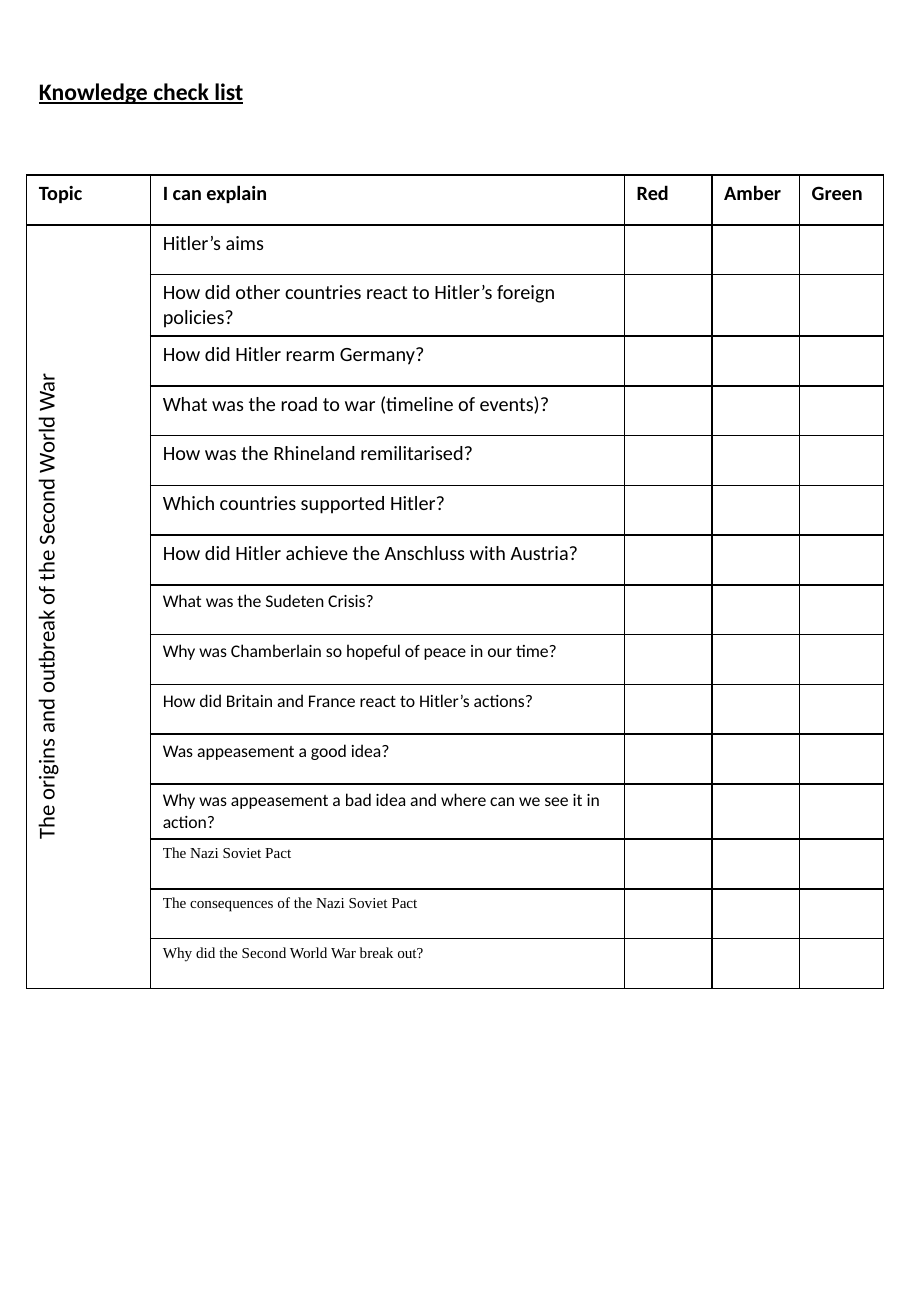
from dataclasses import dataclass

from lxml.etree import SubElement
from pptx import Presentation
from pptx.dml.color import RGBColor
from pptx.enum.text import MSO_ANCHOR, PP_ALIGN
from pptx.oxml.ns import qn
from pptx.slide import Slide
from pptx.table import Table, _Cell as Cell
from pptx.text.text import TextFrame
from pptx.util import Cm, Pt

BLACK = RGBColor(0x00, 0x00, 0x00)
WHITE = RGBColor(0xFF, 0xFF, 0xFF)

LEFT = Cm(0.56)
COLUMN_WIDTHS = [Cm(2.59), Cm(9.91), Cm(1.83), Cm(1.83), Cm(1.75)]
ROW_HEIGHT = Cm(1.04)
HEADERS = ["Topic", "I can explain", "Red", "Amber", "Green"]
TOPIC = "The origins and outbreak of the Second World War"


@dataclass(frozen=True)
class TextStyle:
    size: float
    font: str = "Calibri"
    bold: bool = False
    underline: bool = False


@dataclass(frozen=True)
class QuestionGroup:
    style: TextStyle
    questions: list[str]


TITLE_STYLE = TextStyle(14, bold=True, underline=True)
HEADER_STYLE = TextStyle(12, bold=True)
TOPIC_STYLE = TextStyle(13.5)
QUESTION_GROUPS = [
    QuestionGroup(TextStyle(12), [
        "Hitler’s aims",
        "How did other countries react to Hitler’s foreign policies?",
        "How did Hitler rearm Germany?",
        "What was the road to war (timeline of events)?",
        "How was the Rhineland remilitarised?",
        "Which countries supported Hitler?",
        "How did Hitler achieve the Anschluss with Austria?",
    ]),
    QuestionGroup(TextStyle(10.5), [
        "What was the Sudeten Crisis?",
        "Why was Chamberlain so hopeful of peace in our time?",
        "How did Britain and France react to Hitler’s actions?",
        "Was appeasement a good idea?",
        "Why was appeasement a bad idea and where can we see it in action?",
    ]),
    QuestionGroup(TextStyle(9, "Times New Roman"), [
        "The Nazi Soviet Pact",
        "The consequences of the Nazi Soviet Pact",
        "Why did the Second World War break out?",
    ]),
]


def write_text(text_frame: TextFrame, text: str, style: TextStyle,
               alignment: PP_ALIGN = PP_ALIGN.LEFT) -> None:
    text_frame.text = text
    paragraph = text_frame.paragraphs[0]
    paragraph.alignment = alignment
    font = paragraph.runs[0].font
    font.name = style.font
    font.size = Pt(style.size)
    font.bold = style.bold
    font.underline = style.underline
    font.color.rgb = BLACK


def format_cell(cell: Cell) -> None:
    """Give the cell thin black borders and a white fill."""
    properties = cell._tc.get_or_add_tcPr()
    for side in ("a:lnL", "a:lnR", "a:lnT", "a:lnB"):
        line = SubElement(properties, qn(side), w=str(Pt(1)))
        fill = SubElement(line, qn("a:solidFill"))
        SubElement(fill, qn("a:srgbClr"), val=str(BLACK))
    cell.fill.solid()
    cell.fill.fore_color.rgb = WHITE


def add_title(slide: Slide) -> None:
    title = slide.shapes.title
    title.left, title.top, title.width, title.height = LEFT, Cm(1.47), Cm(12.65), Cm(0.86)
    title.text_frame.vertical_anchor = MSO_ANCHOR.MIDDLE
    write_text(title.text_frame, "Knowledge check list", TITLE_STYLE)


def fill_topic(table: Table) -> None:
    """Merge the first column below the header and turn its text upwards."""
    topic = table.cell(1, 0)
    topic.merge(table.cell(len(table.rows) - 1, 0))
    write_text(topic.text_frame, TOPIC, TOPIC_STYLE, PP_ALIGN.CENTER)
    topic.vertical_anchor = MSO_ANCHOR.MIDDLE
    topic._tc.get_or_add_tcPr().set("vert", "vert270")


def add_checklist(slide: Slide) -> None:
    questions = [(question, group.style)
                 for group in QUESTION_GROUPS for question in group.questions]
    row_count = len(questions) + 1
    table = slide.shapes.add_table(row_count, len(HEADERS), LEFT, Cm(3.66),
                                   sum(COLUMN_WIDTHS), ROW_HEIGHT * row_count).table
    table.first_row = table.horz_banding = False
    for column, width in zip(table.columns, COLUMN_WIDTHS):
        column.width = width
    for row in table.rows:
        row.height = ROW_HEIGHT
    for cell in table.iter_cells():
        format_cell(cell)
    for index, header in enumerate(HEADERS):
        write_text(table.cell(0, index).text_frame, header, HEADER_STYLE)
    for index, (question, style) in enumerate(questions, start=1):
        write_text(table.cell(index, 1).text_frame, question, style)
    fill_topic(table)


def main() -> None:
    presentation = Presentation()
    presentation.slide_width = Cm(19.05)
    presentation.slide_height = Cm(27.51)
    slide = presentation.slides.add_slide(presentation.slide_layouts.get_by_name("Title Only"))
    add_title(slide)
    add_checklist(slide)
    presentation.save("out.pptx")


if __name__ == "__main__":
    main()
